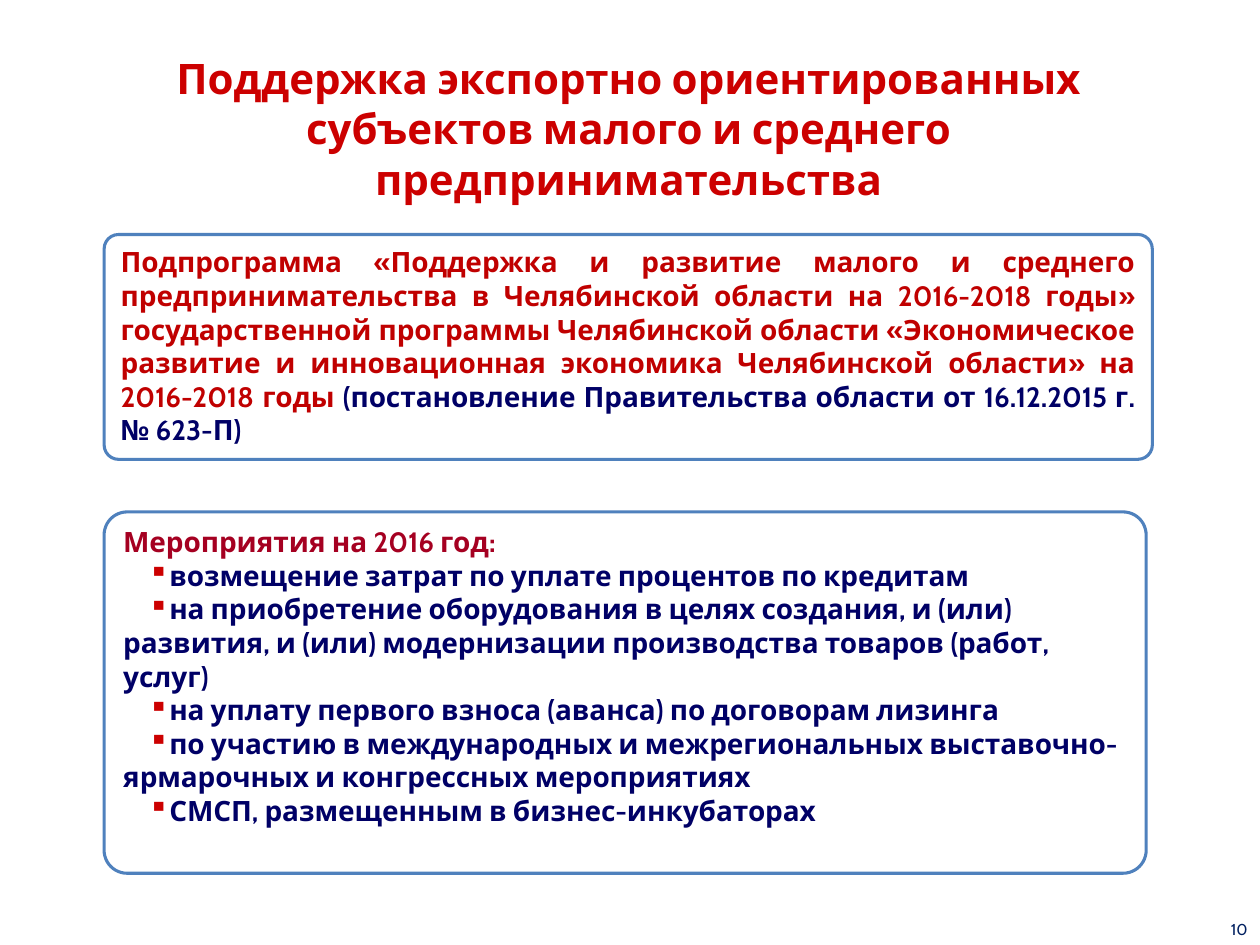
from dataclasses import dataclass

from lxml import etree
from pptx import Presentation
from pptx.dml.color import RGBColor
from pptx.enum.shapes import MSO_SHAPE
from pptx.enum.text import MSO_ANCHOR, MSO_AUTO_SIZE, PP_ALIGN
from pptx.oxml.ns import qn
from pptx.util import Pt

ROUNDED = MSO_SHAPE.ROUNDED_RECTANGLE
TOP, MIDDLE = MSO_ANCHOR.TOP, MSO_ANCHOR.MIDDLE
LEFT, CENTER, RIGHT, JUSTIFY = (
    PP_ALIGN.LEFT, PP_ALIGN.CENTER, PP_ALIGN.RIGHT, PP_ALIGN.JUSTIFY)
FIXED_SIZE = MSO_AUTO_SIZE.NONE
TITLE_ONLY = 5


@dataclass(frozen=True)
class Theme:
    font: str = "Cabin"
    title_size: int = 24
    body_size: int = 16
    number_size: int = 9
    red: str = "CC0000"
    program: str = "C00000"
    heading: str = "A50021"
    navy: str = "000066"
    number: str = "002060"
    outline: str = "4F81BD"
    panel: str = "FFFFFF"
    outline_width: float = 1.75
    corner: float = 0.064
    bullet: str = "▪"
    bullet_indent: float = 14.4


def add_text(paragraph, text, *, font, size, color, bold=True):
    run = paragraph.add_run()
    run.text = text
    run.font.name = font
    run.font.size = Pt(size)
    run.font.bold = bold
    run.font.color.rgb = RGBColor.from_string(color)


class SlideBuilder:
    def __init__(self, slide, theme):
        self.slide = slide
        self.theme = theme

    def fill_frame(self, frame, paragraphs, *, size, align=LEFT, anchor=TOP,
                   bold=True):
        """Fill a frame; each paragraph is (bulleted, [(text, color), ...])."""
        frame.word_wrap = True
        frame.auto_size = FIXED_SIZE
        frame.vertical_anchor = anchor
        for index, (bulleted, parts) in enumerate(paragraphs):
            paragraph = frame.add_paragraph() if index else frame.paragraphs[0]
            paragraph.alignment = align
            if bulleted:
                self.add_bullet(paragraph)
            for text, color in parts:
                add_text(paragraph, text, font=self.theme.font, size=size,
                         color=color, bold=bold)

    def add_bullet(self, paragraph):
        """Indent the first line only, so wrapped lines return to the margin."""
        properties = paragraph._p.get_or_add_pPr()
        properties.set("marL", "0")
        properties.set("indent", str(Pt(self.theme.bullet_indent)))
        color = etree.SubElement(properties, qn("a:buClr"))
        etree.SubElement(color, qn("a:srgbClr"), val=self.theme.red)
        etree.SubElement(properties, qn("a:buChar"), char=self.theme.bullet)

    def title(self, text, left, top, width, height):
        title = self.slide.shapes.title
        title.left, title.top = Pt(left), Pt(top)
        title.width, title.height = Pt(width), Pt(height)
        self.fill_frame(title.text_frame, [(False, [(text, self.theme.red)])],
                        size=self.theme.title_size, align=CENTER, anchor=MIDDLE)

    def panel(self, paragraphs, left, top, width, height, align=LEFT):
        panel = self.slide.shapes.add_shape(
            ROUNDED, Pt(left), Pt(top), Pt(width), Pt(height))
        panel.adjustments[0] = self.theme.corner
        panel.shadow.inherit = False
        panel.fill.solid()
        panel.fill.fore_color.rgb = RGBColor.from_string(self.theme.panel)
        panel.line.color.rgb = RGBColor.from_string(self.theme.outline)
        panel.line.width = Pt(self.theme.outline_width)
        self.fill_frame(panel.text_frame, paragraphs,
                        size=self.theme.body_size, align=align)

    def page_number(self, text, left, top, width, height):
        number = self.slide.shapes.add_textbox(
            Pt(left), Pt(top), Pt(width), Pt(height))
        self.fill_frame(number.text_frame, [(False, [(text, self.theme.number)])],
                        size=self.theme.number_size, align=RIGHT, bold=False)


MEASURES = [
    "возмещение затрат по уплате процентов по кредитам",
    "на приобретение оборудования в целях создания, и (или) развития, "
    "и (или) модернизации производства товаров (работ, услуг)",
    "на уплату первого взноса (аванса) по договорам лизинга",
    "по участию в международных и межрегиональных "
    "выставочно-ярмарочных и конгрессных мероприятиях",
    "СМСП, размещенным в бизнес-инкубаторах",
]


def main():
    theme = Theme()
    deck = Presentation()
    deck.slide_width, deck.slide_height = Pt(720), Pt(540)
    slide = deck.slides.add_slide(deck.slide_layouts[TITLE_ONLY])
    builder = SlideBuilder(slide, theme)

    builder.title(
        "Поддержка экспортно ориентированных субъектов малого и среднего "
        "предпринимательства", 70.5, 26, 577.5, 94.5)
    builder.page_number("10", 680.4, 522, 39.6, 18)

    program = [
        ("Подпрограмма «Поддержка и развитие малого и среднего "
         "предпринимательства в Челябинской области на 2016-2018 годы» "
         "государственной программы Челябинской области «Экономическое "
         "развитие и инновационная экономика Челябинской области» "
         "на 2016-2018 годы ", theme.program),
        ("(постановление Правительства области от 16.12.2015 г. № 623-П)",
         theme.navy),
    ]
    panel_left = 59.5
    builder.panel([(False, program)], panel_left, 134, 599, 128.5, align=JUSTIFY)

    heading = (False, [("Мероприятия на 2016 год:", theme.heading)])
    measures = [(True, [(measure, theme.navy)]) for measure in MEASURES]
    builder.panel([heading, *measures], panel_left, 292.5, 595.5, 206.5)

    deck.save("out.pptx")


if __name__ == "__main__":
    main()
